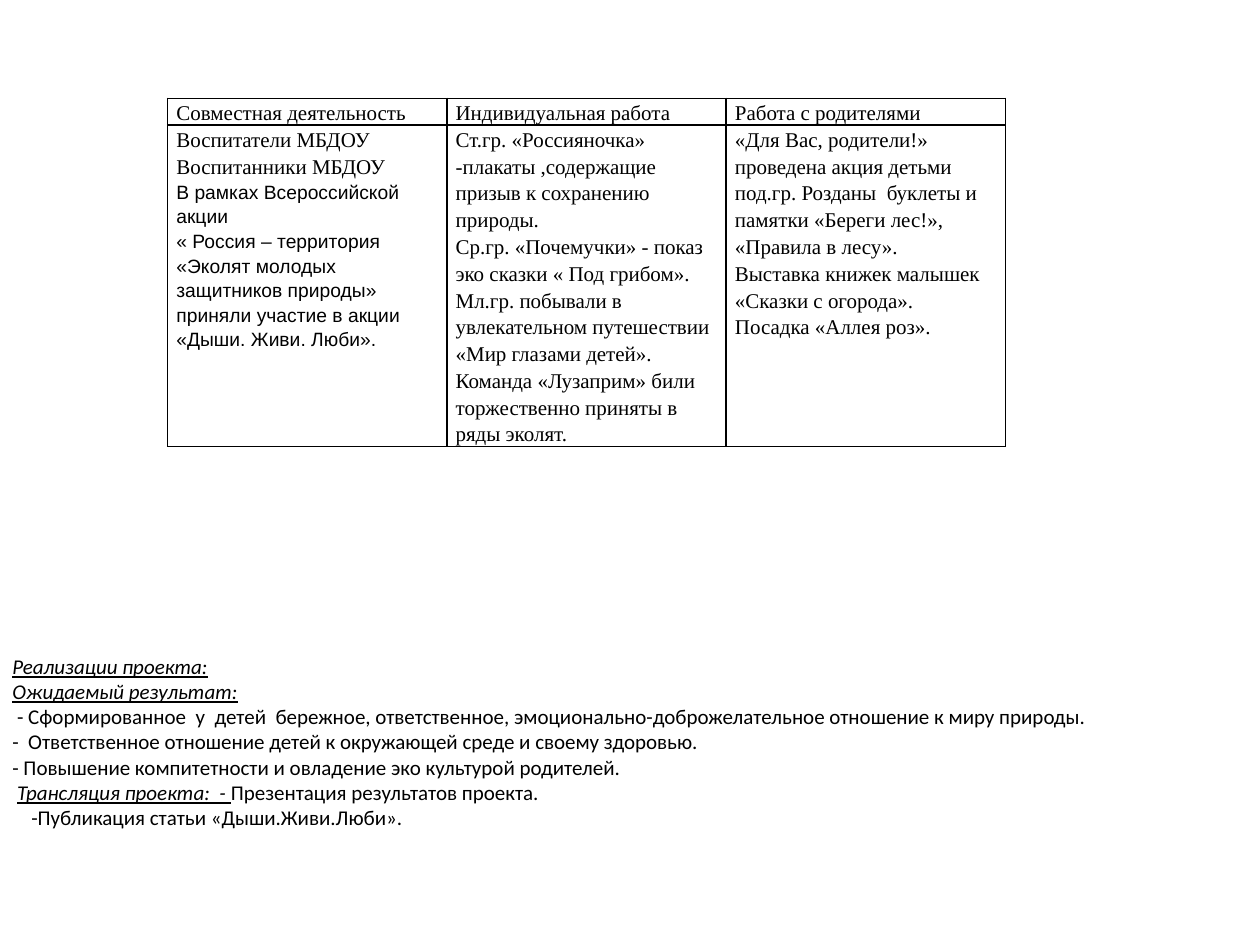
from lxml.etree import SubElement
from pptx import Presentation
from pptx.dml.color import RGBColor
from pptx.enum.text import MSO_ANCHOR
from pptx.oxml.ns import qn
from pptx.util import Inches, Pt

BLACK = "000000"
SERIF, SANS, BODY = "Times New Roman", "Arial", "Calibri"

HEADS = ["Совместная деятельность", "Индивидуальная работа", "Работа с родителями"]
JOINT = [
    "Воспитатели МБДОУ",
    "Воспитанники МБДОУ",
    ("В рамках Всероссийской акции", SANS, 11),
    ("« Россия – территория", SANS, 11),
    ("«Эколят молодых защитников природы» приняли участие в акции "
     "«Дыши. Живи. Люби».", SANS, 11),
]
GROUPS = [
    "Ст.гр. «Россияночка» -плакаты ,содержащие призыв к сохранению природы.",
    "Ср.гр. «Почемучки» - показ эко сказки « Под грибом».",
    "Мл.гр. побывали в увлекательном путешествии «Мир глазами детей».",
    "Команда «Лузаприм» били торжественно приняты в ряды эколят.",
]
PARENTS = [
    "«Для Вас, родители!» проведена акция детьми под.гр. Розданы  буклеты "
    "и памятки «Береги лес!», «Правила в лесу».",
    "Выставка книжек малышек «Сказки с огорода».",
    "Посадка «Аллея роз».",
]
ROWS = [[[head] for head in HEADS], [JOINT, GROUPS, PARENTS]]

# Each line: left indent in inches, then (text, is a heading) parts
RESULTS = [
    (0, [("Реализации проекта:", True)]),
    (0, [("Ожидаемый результат:", True)]),
    (0, [(" - Сформированное  у  детей  бережное, ответственное, "
          "эмоционально-доброжелательное отношение к миру природы.", False)]),
    (0, [("-  Ответственное отношение детей к окружающей среде и своему здоровью.", False)]),
    (0, [("- Повышение компитетности и овладение эко культурой родителей.", False)]),
    (0, [(" ", False), ("Трансляция проекта:  - ", True),
         ("Презентация результатов проекта.", False)]),
    (0.15, [("-Публикация статьи «Дыши.Живи.Люби».", False)]),
]


def color(code):
    return RGBColor.from_string(code)


class Page:
    def __init__(self, slide, ink=BLACK, size=12):
        self.slide, self.ink, self.size = slide, ink, size

    def style(self, font, name, size=None):
        font.name, font.size = name, Pt(size or self.size)
        font.color.rgb = color(self.ink)

    def lines(self, frame, items):
        """Yield each item with its own paragraph of the frame."""
        for n, item in enumerate(items):
            yield frame.add_paragraph() if n else frame.paragraphs[0], item

    def border(self, cell):
        props = cell._tc.get_or_add_tcPr()
        for n, side in enumerate(("lnL", "lnR", "lnT", "lnB")):
            line = SubElement(props, qn(f"a:{side}"), w=str(Pt(1)))
            fill = SubElement(line, qn("a:solidFill"))
            SubElement(fill, qn("a:srgbClr"), val=self.ink)
            props.insert(n, line)

    def cell(self, cell, items):
        cell.fill.background()
        self.border(cell)
        cell.margin_left = cell.margin_right = Inches(0.07)
        cell.margin_top = cell.margin_bottom = 0
        for para, item in self.lines(cell.text_frame, items):
            text, name, size = (item, SERIF, 12) if isinstance(item, str) else item
            para.text, para.line_spacing = text, 1.15
            self.style(para.font, name, size)

    def table(self, left, top, width, heights, rows):
        table = self.slide.shapes.add_table(
            len(rows), len(rows[0]), Inches(left), Inches(top),
            Inches(width), Inches(sum(heights))).table
        table.first_row = table.horz_banding = False
        for row, height, cells in zip(table.rows, heights, rows):
            row.height = Inches(height)
            for cell, items in zip(row.cells, cells):
                self.cell(cell, items)

    def text(self, left, top, width, height, items):
        frame = self.slide.shapes.add_textbox(
            Inches(left), Inches(top), Inches(width), Inches(height)).text_frame
        frame.word_wrap, frame.vertical_anchor = True, MSO_ANCHOR.MIDDLE
        for para, (indent, parts) in self.lines(frame, items):
            self.style(para.font, BODY)
            if indent:
                para._p.get_or_add_pPr().set("marL", str(Inches(indent)))
            for words, heading in parts:
                run = para.add_run()
                run.text = words
                if heading:
                    run.font.italic = run.font.underline = True


def main():
    deck = Presentation()
    deck.slide_width, deck.slide_height = Inches(10), Inches(7.5)
    page = Page(deck.slides.add_slide(deck.slide_layouts[6]))
    page.table(1.33, 0.78, 6.65, [0.21, 2.55], ROWS)
    page.text(0, 5.13, 9.77, 1.51, RESULTS)
    deck.save("out.pptx")


if __name__ == "__main__":
    main()
